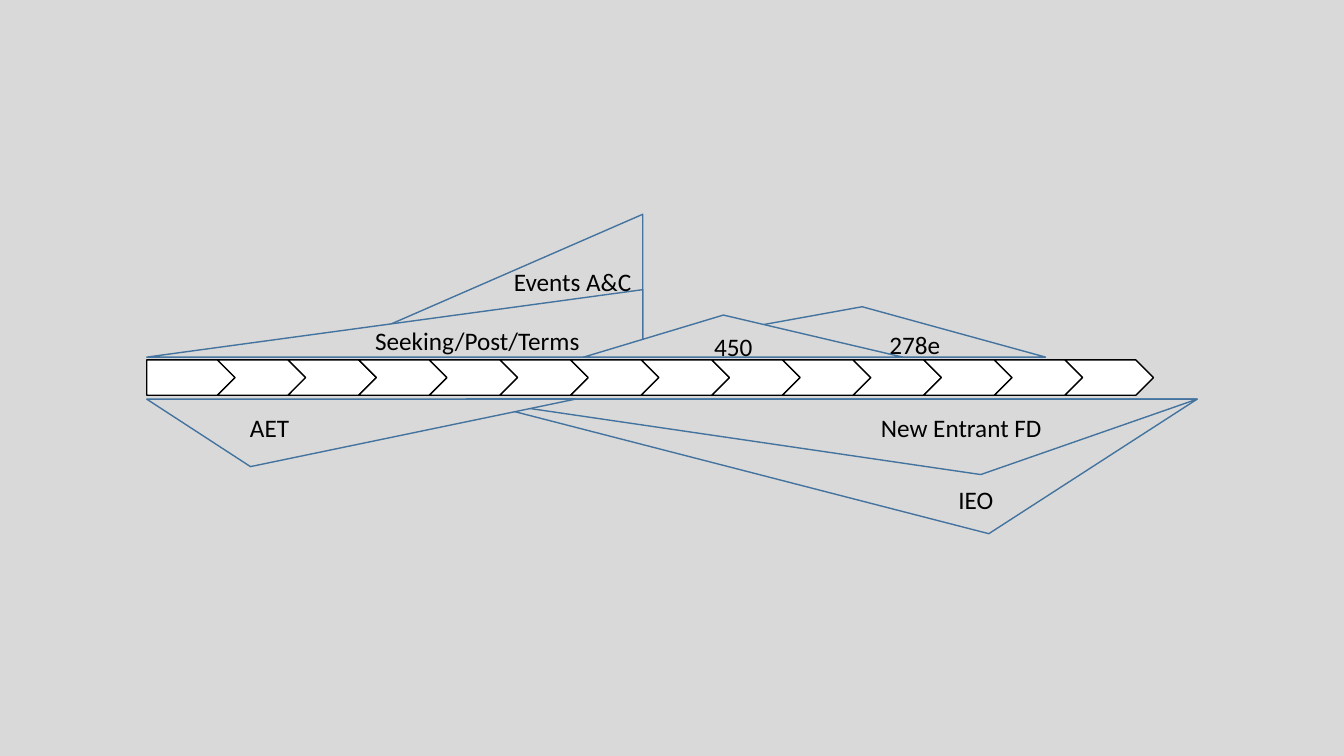
from pptx import Presentation
from pptx import util as u
from pptx.dml.color import RGBColor
from pptx.enum import shapes, text

GREY = RGBColor(0xD9, 0xD9, 0xD9)
WHITE = RGBColor(0xFF, 0xFF, 0xFF)
BLACK = RGBColor(0, 0, 0)
BLUE = RGBColor(0x43, 0x73, 0x9E)

KIND = shapes.MSO_SHAPE
CENTER = text.PP_ALIGN.CENTER
LEFT = text.PP_ALIGN.LEFT
UPPER_EDGE = 9.0
LOWER_EDGE = 10.06
START = 3.7
STEPS = 14
STEP_PITCH = 1.78


class Timeline:
    font_format = {"name": "Calibri", "size": u.Pt(18)}
    label_format = {"word_wrap": False, "auto_size": text.MSO_AUTO_SIZE.SHAPE_TO_FIT_TEXT}

    def __init__(self, deck):
        self.slide = deck.slides.add_slide(deck.slide_layouts[6])
        background = self.slide.background.fill
        background.solid()
        background.fore_color.rgb = GREY

    def outline(self, parent, kind, box, fill, line):
        part = parent.add_shape(kind, *map(u.Cm, box))
        part.shadow.inherit = False
        part.fill.solid()
        part.fill.fore_color.rgb = fill
        part.line.color.rgb = line
        part.line.width = u.Pt(1)
        return part

    def caption(self, part, wording, align, indent=0):
        paragraph = part.text_frame.paragraphs[0]
        paragraph.alignment = align
        if indent:
            properties = paragraph._p.get_or_add_pPr()
            properties.set("marL", str(u.Cm(indent)))
            properties.set("indent", "0")
        run = paragraph.add_run()
        run.text = wording
        for key, value in self.font_format.items():
            setattr(run.font, key, value)
        run.font.color.rgb = BLACK

    def steps(self):
        band = self.slide.shapes.add_group_shape().shapes
        for step in range(STEPS):
            kind = KIND.CHEVRON if step else KIND.PENTAGON
            box = (START + step * STEP_PITCH, 9.07, 2.23, 0.89)
            self.outline(band, kind, box, WHITE, BLACK)

    def phase(self, left, width, height, peak=None, below=False, wording="", indent=0):
        kind = KIND.RIGHT_TRIANGLE if peak is None else KIND.ISOSCELES_TRIANGLE
        top = LOWER_EDGE if below else UPPER_EDGE - height
        part = self.outline(self.slide.shapes, kind, (left, top, width, height), GREY, BLUE)
        if peak is None:
            part.element.spPr.get_or_add_xfrm().set("flipH", "1")
        else:
            part.adjustments[0] = peak
        if below:
            part.element.spPr.get_or_add_xfrm().set("flipV", "1")
        if wording:
            part.text_frame.vertical_anchor = text.MSO_ANCHOR.MIDDLE
            self.caption(part, wording, CENTER, indent)

    def label(self, wording, left, top, width, filled=True):
        part = self.slide.shapes.add_textbox(*map(u.Cm, (left, top, width, 1.03)))
        if filled:
            part.fill.solid()
            part.fill.fore_color.rgb = GREY
        for key, value in self.label_format.items():
            setattr(part.text_frame, key, value)
        self.caption(part, wording, LEFT)


def main():
    deck = Presentation()
    deck.slide_width, deck.slide_height = u.Cm(33.87), u.Cm(19.05)
    timeline = Timeline(deck)
    timeline.steps()
    timeline.phase(7.94, 8.26, 3.6, peak=1)
    timeline.phase(START, 12.5, 1.7, wording="Seeking/Post/Terms")
    timeline.phase(11.75, 18.42, 3.39, peak=0.715, below=True)
    timeline.phase(11.75, 18.42, 1.9, peak=0.704, below=True)
    timeline.label("New Entrant FD", 21.95, 10.26, 4.6)
    timeline.label("IEO", 23.9, 12.09, 1.4)
    timeline.label("Events A&C", 12.7, 6.58, 3.5, filled=False)
    timeline.phase(START, 10.8, 1.7, peak=0.242, below=True)
    timeline.label("AET", 6.05, 10.26, 1.5)
    timeline.phase(14.71, 11.64, 1.27, peak=0.603, wording="278e", indent=3.85)
    timeline.phase(14.71, 8.04, 1.06, peak=0.438, wording="450")
    deck.save("out.pptx")


if __name__ == "__main__":
    main()
